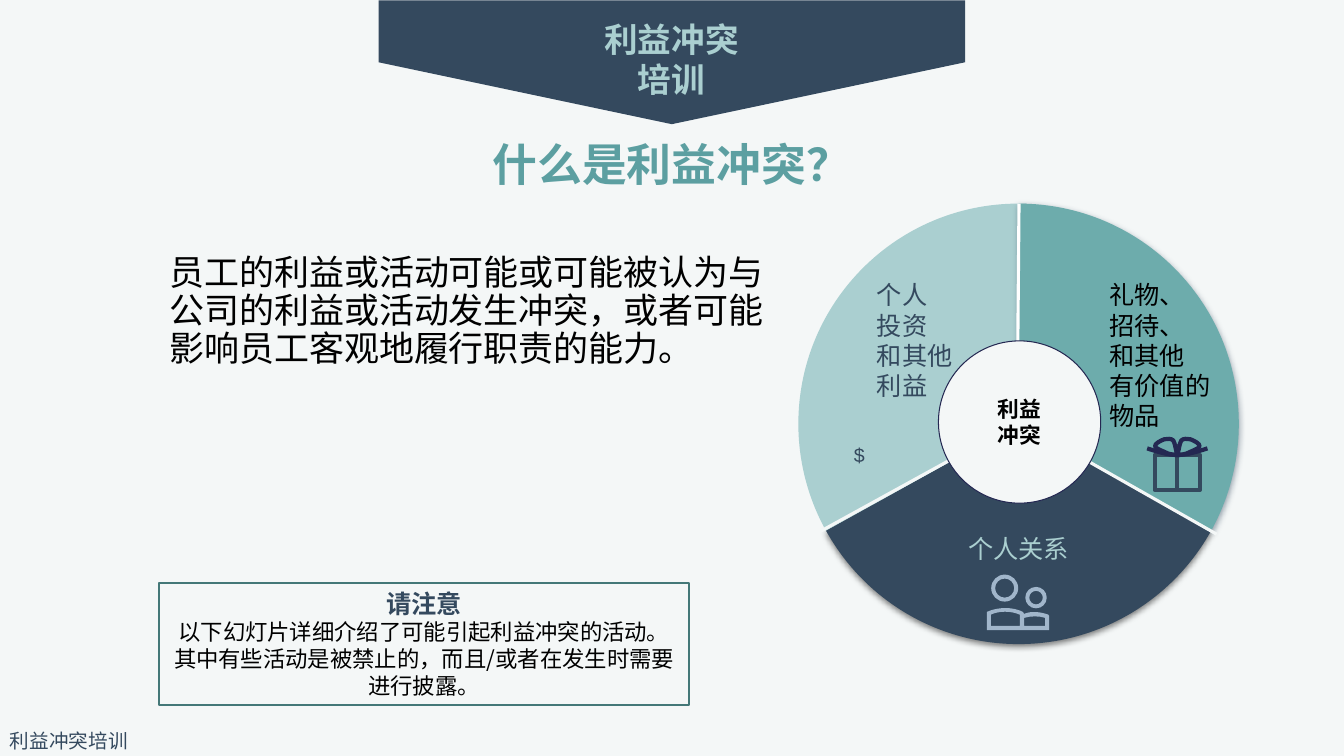
"""Build the conflict of interest training slide with its three-part wheel."""
from math import cos, radians, sin, tan

from lxml import etree
from pptx import Presentation
from pptx.dml.color import RGBColor
from pptx.enum.shapes import MSO_CONNECTOR, MSO_SHAPE
from pptx.enum.text import MSO_ANCHOR, MSO_AUTO_SIZE, PP_ALIGN
from pptx.oxml.ns import qn
from pptx.util import Cm, Pt

LEFT, CENTER = PP_ALIGN.LEFT, PP_ALIGN.CENTER
TOP, MIDDLE = MSO_ANCHOR.TOP, MSO_ANCHOR.MIDDLE
STRAIGHT = MSO_CONNECTOR.STRAIGHT
CJK = "Noto Sans CJK SC"
COLORS = {
    "paper": "F4F7F7", "navy": "34495E", "pale": "AACFD0", "teal": "6DACAC",
    "title": "5C9FA1", "frame": "447878", "ink": "000000", "bow": "242852",
    "people": "A1B6CB", "white": "FFFFFF",
}


def write(shape, lines, size, color, bold=False, align=CENTER, anchor=TOP, font=CJK):
    """Fill a shape with paragraphs of one style."""
    frame = shape.text_frame
    frame.word_wrap = True
    frame.auto_size = MSO_AUTO_SIZE.NONE
    frame.vertical_anchor = anchor
    frame.text = "\n".join(lines)
    for para in frame.paragraphs:
        para.alignment = align
        para.font.size = Pt(size)
        para.font.bold = bold
        para.font.name = font
        para.font.color.rgb = RGBColor.from_string(COLORS[color])
        etree.SubElement(para.font._element, qn("a:ea"), typeface=CJK)
    return frame


def draw(contours, close=True):
    """Draw contours of points (2 numbers), curves (6) and arcs (x, y, radius, from, to)."""
    builder = None
    for pieces in contours:
        points = []
        for piece in pieces:
            if len(piece) == 5:
                x, y, radius, start, end = piece
                quarters = [a for a in range(0, 721, 90) if min(start, end) < a < max(start, end)]
                stops = sorted([start, end, *quarters], reverse=end < start)
                spots = [(x + radius * cos(radians(a)), y + radius * sin(radians(a))) for a in stops]
                points += [spots[0]] * (3 if points else 1)
                for a, b, (ax, ay), (bx, by) in zip(stops, stops[1:], spots, spots[1:]):
                    reach = 4 / 3 * tan(radians(b - a) / 4)
                    points += [(ax - reach * (ay - y), ay + reach * (ax - x)),
                               (bx + reach * (by - y), by - reach * (bx - x)), (bx, by)]
            elif len(piece) == 2:
                points += [piece] * (3 if points else 1)
            else:
                points += [piece[0:2], piece[2:4], piece[4:6]]
        points = [(Cm(x), Cm(y)) for x, y in points]
        if builder:
            builder.move_to(*points[0])
        else:
            builder = page.shapes.build_freeform(*points[0], scale=1.0)
        builder.add_line_segments(points[1:], close=close)
    shape = builder.convert_to_shape()
    steps = list(shape._element.spPr.iter(qn("a:lnTo")))
    for first in range(0, len(steps), 3):
        curve = etree.Element(qn("a:cubicBezTo"))
        steps[first].addprevious(curve)
        for step in steps[first:first + 3]:
            curve.append(step[0])
            step.getparent().remove(step)
    return shape


deck = Presentation()
deck.slide_width, deck.slide_height = Cm(33.87), Cm(19.05)
page = deck.slides.add_slide(deck.slide_layouts[5])
page.background.fill.solid()
page.background.fill.fore_color.rgb = RGBColor.from_string(COLORS["paper"])
shapes = page.shapes
looks = []

box = shapes.add_textbox(Cm(0), Cm(18.24), Cm(8.15), Cm(0.86))
write(box, ["利益冲突培训"], 14, "navy", align=LEFT)

banner = shapes.add_shape(MSO_SHAPE.PENTAGON, Cm(15.37), Cm(-5.82), Cm(3.12), Cm(14.78))
banner.rotation = 90
looks.append((banner, "navy", None, 0))

box = shapes.add_textbox(Cm(4.02), Cm(6.32), Cm(16.15), Cm(5.84))
definition = "员工的利益或活动可能或可能被认为与公司的利益或活动发生冲突，或者可能影响员工客观地履行职责的能力。"
write(box, [definition], 25, "ink", align=LEFT).paragraphs[0].line_spacing = 0.9

box = shapes.add_textbox(Cm(7.55), Cm(0.34), Cm(18.75), Cm(2.31))
write(box, ["利益冲突", "培训"], 24, "pale", bold=True)

title = shapes.title
title.left, title.top, title.width, title.height = Cm(4.47), Cm(3.07), Cm(24.92), Cm(1.88)
para = write(title, ["什么是利益冲突？"], 32, "title", bold=True, anchor=MIDDLE).paragraphs[0]
para.line_spacing = 1.15
para.space_after = Pt(6)

wheel_x, wheel_y, outer, inner = 25.67, 10.68, 5.55, 1.9
sectors = [
    (29, 151, "navy", ["个人关系"], "pale", CENTER, 0.25, 1.83, "ink"),
    (151, 272, "pale", ["个人", "投资", "和其他", "利益"], "navy", LEFT, 1.98, 1.92, None),
    (270, 389, "teal", ["礼物、", "招待、", "和其他", "有价值的", "物品"], "ink", LEFT, 2.29, 1.92, "navy"),
]
for start, end, fill, lines, color, align, inset, drop, shade in sectors:
    sector = draw([[(wheel_x, wheel_y, outer, start, end), (wheel_x, wheel_y, inner, end, start)]])
    looks.append((sector, fill, None, 0))
    frame = write(sector, lines, 18, color, align=align)
    frame.margin_left, frame.margin_right, frame.margin_top = Cm(inset), Cm(0.25), Cm(drop)
    if shade:
        effects = etree.SubElement(sector._element.spPr, qn("a:effectLst"))
        shadow = etree.SubElement(effects, qn("a:outerShdw"), blurRad=str(Pt(4.5)),
                                  dist=str(Pt(1.5)), dir="5400000")
        tint = etree.SubElement(shadow, qn("a:srgbClr"), val=COLORS[shade])
        etree.SubElement(tint, qn("a:alpha"), val="50000")

spokes = [(24.69, 11.18, 20.4, 13.54, "paper"), (27.31, 11.56, 30.66, 13.46, "paper"),
          (25.68, 5.13, 25.65, 8.61, "white")]
for *ends, color in spokes:
    spoke = shapes.add_connector(STRAIGHT, *[Cm(end) for end in ends])
    looks.append((spoke, None, color, 2.25))

hub = shapes.add_shape(MSO_SHAPE.OVAL, Cm(23.65), Cm(8.59), Cm(4.09), Cm(4.09))
looks.append((hub, "paper", "bow", 0.75))
write(hub, ["利益", "冲突"], 15.5, "ink", bold=True, anchor=MIDDLE, font="Arial")

gift_x = 29.67
gift = shapes.add_shape(MSO_SHAPE.RECTANGLE, Cm(gift_x - 0.57), Cm(11.46), Cm(1.14), Cm(0.89))
ribbon = shapes.add_connector(STRAIGHT, Cm(gift_x), Cm(11.2), Cm(gift_x), Cm(12.37))
looks += [(gift, None, "navy", 3), (ribbon, None, "navy", 3)]

loop = [(-0.76, 11.3), (-0.66, 11.33, -0.28, 11.46, -0.1, 11.46),
        (0.05, 11.48, 0.1, 11.46, 0.23, 11.43), (0.33, 11.38, 0.56, 11.3, 0.56, 11.25),
        (0.58, 11.18, 0.41, 11.1, 0.33, 11.07), (0.25, 11.05, 0.15, 11.05, 0.1, 11.1),
        (0.05, 11.18, 0.03, 11.4, 0, 11.46)]
for side in (1, -1):
    bow = draw([[tuple(value if index % 2 else gift_x + side * value
                       for index, value in enumerate(piece)) for piece in loop]], close=False)
    looks.append((bow, None, "bow", 3))

heads = [(25.32, 14.82, 0.24), (25.32, 14.82, 0.34), (26.11, 15.06, 0.17), (26.11, 15.06, 0.27)]
bodies = [
    [(26.34, 15.77), (25.81, 15.77), (25.81, 15.57), (25.98, 15.52, 26.19, 15.52, 26.34, 15.57)],
    [(25.7, 15.77), (24.97, 15.77), (24.97, 15.49), (25.17, 15.39, 25.48, 15.39, 25.7, 15.49)],
    [(26.42, 15.49), (26.24, 15.42, 25.98, 15.39, 25.81, 15.47), (25.78, 15.42),
     (25.53, 15.29, 25.15, 15.29, 24.87, 15.42), (24.87, 15.88), (26.44, 15.88), (26.44, 15.52)],
]
people = draw([[(*head, 0, 360)] for head in heads] + bodies)
looks.append((people, "people", None, 0))

box = shapes.add_textbox(Cm(20.93), Cm(11.04), Cm(1.45), Cm(1.22))
write(box, ["$"], 14, "navy", font="Arial")

note = shapes.add_shape(MSO_SHAPE.RECTANGLE, Cm(4.01), Cm(14.7), Cm(13.36), Cm(3.07))
looks.append((note, None, "frame", 1.5))
warning = "以下幻灯片详细介绍了可能引起利益冲突的活动。其中有些活动是被禁止的，而且/或者在发生时需要进行披露。"
heading = write(note, ["请注意", warning], 16, "ink").paragraphs[0]
heading.font.size = Pt(18)
heading.font.bold = True
heading.font.color.rgb = RGBColor.from_string(COLORS["navy"])

for shape, fill, line, width in looks:
    if fill:
        shape.fill.solid()
        shape.fill.fore_color.rgb = RGBColor.from_string(COLORS[fill])
    elif hasattr(shape, "fill"):
        shape.fill.background()
    if line:
        shape.line.color.rgb = RGBColor.from_string(COLORS[line])
        shape.line.width = Pt(width)
    else:
        shape.line.fill.background()
    if shape._element.spPr.find(qn("a:effectLst")) is None:
        etree.SubElement(shape._element.spPr, qn("a:effectLst"))

deck.save("out.pptx")
